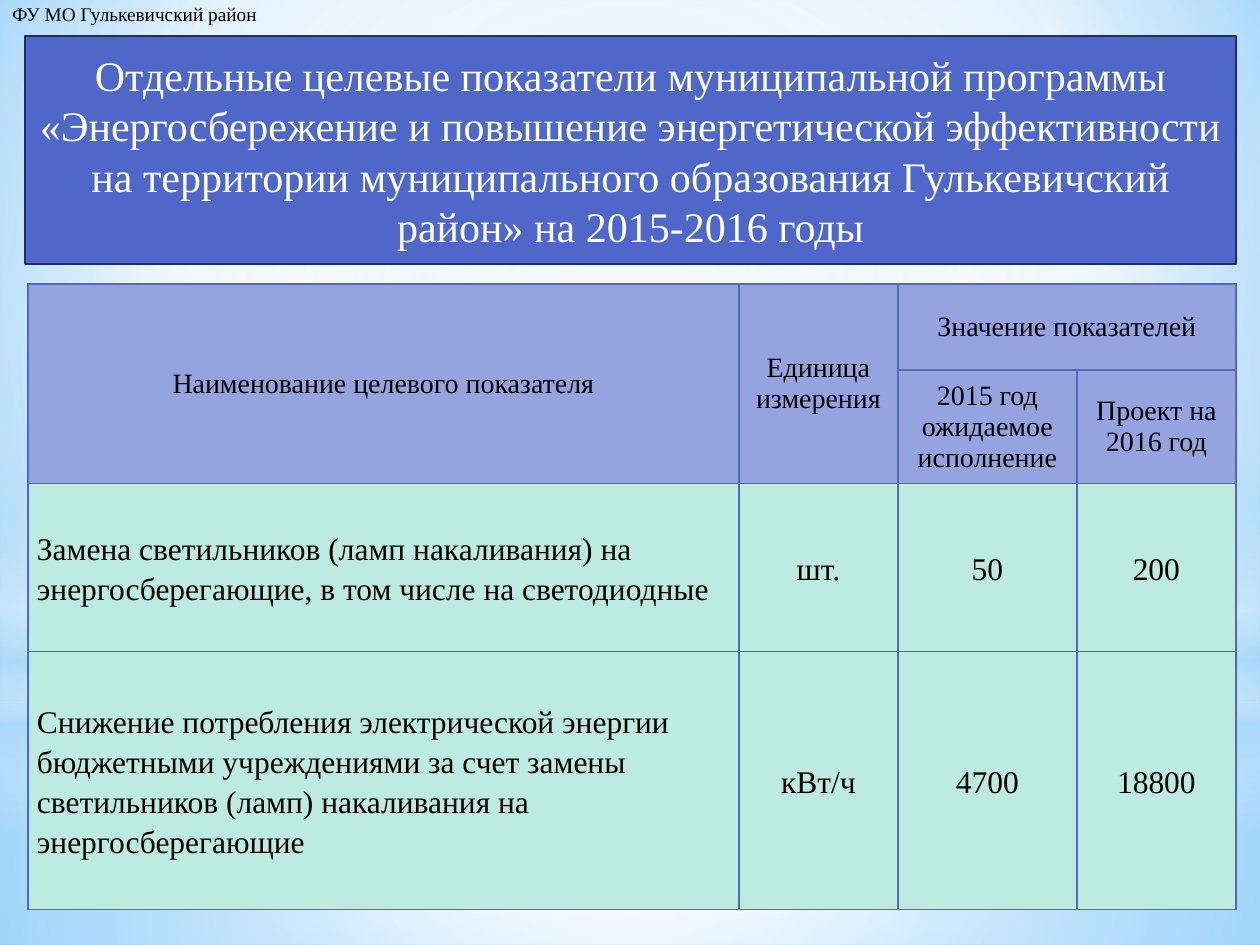
from lxml import etree
from pptx import Presentation
from pptx.dml.color import RGBColor
from pptx.enum.shapes import MSO_SHAPE
from pptx.enum.text import MSO_ANCHOR, MSO_AUTO_SIZE, PP_ALIGN
from pptx.oxml import parse_xml
from pptx.util import Emu, Pt

PX_PER_INCH = 126
FONT = "Times New Roman"
NS = "http://schemas.openxmlformats.org/drawingml/2006/main"
RECT, OVAL = MSO_SHAPE.RECTANGLE, MSO_SHAPE.OVAL
LEFT, CENTER = PP_ALIGN.LEFT, PP_ALIGN.CENTER
MIDDLE = MSO_ANCHOR.MIDDLE
NO_FIT = MSO_AUTO_SIZE.NONE

BLUE, NAVY, EDGE = "4E67C8", "1F2E69", "5968B0"
HEAD_FILL, BODY_FILL = "95A4DE", "BEEBDF"
WHITE, SKY, BLACK = "FFFFFF", "B4DCFA", "000000"

# Gradient stops: position %, colour, opacity %
BACKGROUND = [(0, "9ED5FF", 100), (60, WHITE, 100), (100, "5BB9FF", 100)]
MIDDLE_FOCUS = (50, 50, 50, 50)
GLOWS = [  # preset, box, stops, focus (None for a vertical gradient)
    (RECT, (0, 703, 1260, 242), [(0, WHITE, 91), (37, WHITE, 76), (100, SKY, 79)], MIDDLE_FOCUS),
    (RECT, (0, 0, 1260, 703), [(0, WHITE, 89), (48, WHITE, 62), (100, SKY, 79)], MIDDLE_FOCUS),
    (RECT, (0, 519, 1260, 315), [(0, WHITE, 0), (29, WHITE, 30), (45, SKY, 40),
                                 (55, WHITE, 26), (65, SKY, 60), (100, WHITE, 0)], None),
    (OVAL, (0, 220, 1260, 703), [(0, WHITE, 100), (56, WHITE, 0)], MIDDLE_FOCUS),
]

TITLE = ("Отдельные целевые показатели муниципальной программы «Энергосбережение "
         "и повышение энергетической эффективности на территории муниципального "
         "образования Гулькевичский район» на 2015-2016 годы")
COLS = [711, 159, 179, 159]
ROWS = [86, 113, 168, 258]
CELLS = [
    ["Наименование целевого показателя", "Единица\nизмерения", "Значение показателей", ""],
    ["", "", "2015 год ожидаемое исполнение", "Проект на 2016 год"],
    ["Замена светильников (ламп накаливания) на энергосберегающие, "
     "в том числе на светодиодные", "шт.", "50", "200"],
    ["Снижение потребления электрической энергии бюджетными учреждениями за счет "
     "замены светильников (ламп) накаливания на энергосберегающие", "кВт/ч", "4700", "18800"],
]
MERGES = [((0, 0), (1, 0)), ((0, 1), (1, 1)), ((0, 2), (0, 3))]
HEAD_ROWS = 2


def px(n):
    return Emu(round(n * 914400 / PX_PER_INCH))


def rgb(value):
    return RGBColor.from_string(value)


def set_attrs(obj, values):
    for name, value in values.items():
        setattr(obj, name, value)


def place(sp, box):
    set_attrs(sp, dict(zip(("left", "top", "width", "height"), map(px, box))))


def write(tf, text, size, color, align=LEFT, spacing=None):
    tf.text = text
    for p in tf.paragraphs:
        set_attrs(p, {"alignment": align, "line_spacing": spacing})
        for r in p.runs:
            set_attrs(r.font, {"name": FONT, "size": Pt(size)})
            r.font.color.rgb = rgb(color)


def set_gradient(owner, stops, focus):
    """Replace the solid fill held by owner with a gradient."""
    gs = "".join(
        f'<a:gs pos="{pos * 1000}"><a:srgbClr val="{color}">'
        f'<a:alpha val="{alpha * 1000}"/></a:srgbClr></a:gs>'
        for pos, color, alpha in stops)
    if focus:
        sides = " ".join(f'{side}="{n * 1000}"' for side, n in zip("ltrb", focus))
        way = f'<a:path path="circle"><a:fillToRect {sides}/></a:path>'
    else:
        way = '<a:lin ang="5400000" scaled="0"/>'
    grad = parse_xml(f'<a:gradFill xmlns:a="{NS}" rotWithShape="1">'
                     f'<a:gsLst>{gs}</a:gsLst>{way}</a:gradFill>')
    solid = owner.find(f"{{{NS}}}solidFill")
    owner.replace(solid, grad)


def add_background(slide):
    slide.background.fill.solid()
    set_gradient(slide._element.xpath("./p:cSld/p:bg/p:bgPr")[0], BACKGROUND, (20, 10, 20, 60))
    for preset, box, stops, focus in GLOWS:
        sp = slide.shapes.add_shape(preset, *map(px, box))
        sp.shadow.inherit = False
        sp.line.fill.background()
        sp.fill.solid()
        set_gradient(sp._element.spPr, stops, focus)


def add_label(slide, text, box):
    sp = slide.shapes.add_textbox(*map(px, box))
    sp.text_frame.word_wrap = False
    write(sp.text_frame, text, 11, BLACK)


def add_title(slide, text, box):
    sp = slide.shapes.title
    place(sp, box)
    # Rounded outline, drawn above the background glows
    geom = etree.SubElement(sp._element.spPr, f"{{{NS}}}prstGeom", prst="roundRect")
    etree.SubElement(geom, f"{{{NS}}}avLst")
    slide.shapes._spTree.append(sp._element)
    sp.fill.solid()
    sp.fill.fore_color.rgb = rgb(BLUE)
    sp.line.color.rgb = rgb(NAVY)
    sp.line.width = Pt(1.25)
    set_attrs(sp.text_frame, {"word_wrap": True, "auto_size": NO_FIT, "vertical_anchor": MIDDLE})
    write(sp.text_frame, text, 24, WHITE, CENTER)


def set_borders(cell):
    tc_pr = cell._tc.get_or_add_tcPr()
    sides = [("L", BLUE), ("R", BLUE), ("T", EDGE), ("B", EDGE)]
    for i, (side, color) in enumerate(sides):
        tc_pr.insert(i, parse_xml(
            f'<a:ln{side} xmlns:a="{NS}" w="12700"><a:solidFill>'
            f'<a:srgbClr val="{color}"/></a:solidFill></a:ln{side}>'))


def add_table(slide, left, top):
    frame = slide.shapes.add_table(len(ROWS), len(COLS), px(left), px(top),
                                   px(sum(COLS)), px(sum(ROWS)))
    table = frame.table
    for col, width in zip(table.columns, COLS):
        col.width = px(width)
    for row, height in zip(table.rows, ROWS):
        row.height = px(height)
    for first, last in MERGES:
        table.cell(*first).merge(table.cell(*last))
    for i, row in enumerate(CELLS):
        head = i < HEAD_ROWS
        for j, text in enumerate(row):
            cell = table.cell(i, j)
            cell.vertical_anchor = MIDDLE
            cell.fill.solid()
            cell.fill.fore_color.rgb = rgb(HEAD_FILL if head else BODY_FILL)
            set_borders(cell)
            if head:
                write(cell.text_frame, text, 16, BLACK, CENTER)
            else:
                set_attrs(cell, {"margin_left": px(9), "margin_right": px(9),
                                 "margin_top": 0, "margin_bottom": 0})
                write(cell.text_frame, text, 18, BLACK, CENTER if j else LEFT, 1.15)


def main():
    prs = Presentation()
    prs.slide_width, prs.slide_height = px(1260), px(945)
    slide = prs.slides.add_slide(prs.slide_layouts[5])
    add_background(slide)
    add_label(slide, "ФУ МО Гулькевичский район", (0, -4, 275, 37))
    add_table(slide, 28, 284)
    add_title(slide, TITLE, (25, 36, 1211, 228))
    prs.save("out.pptx")


if __name__ == "__main__":
    main()
